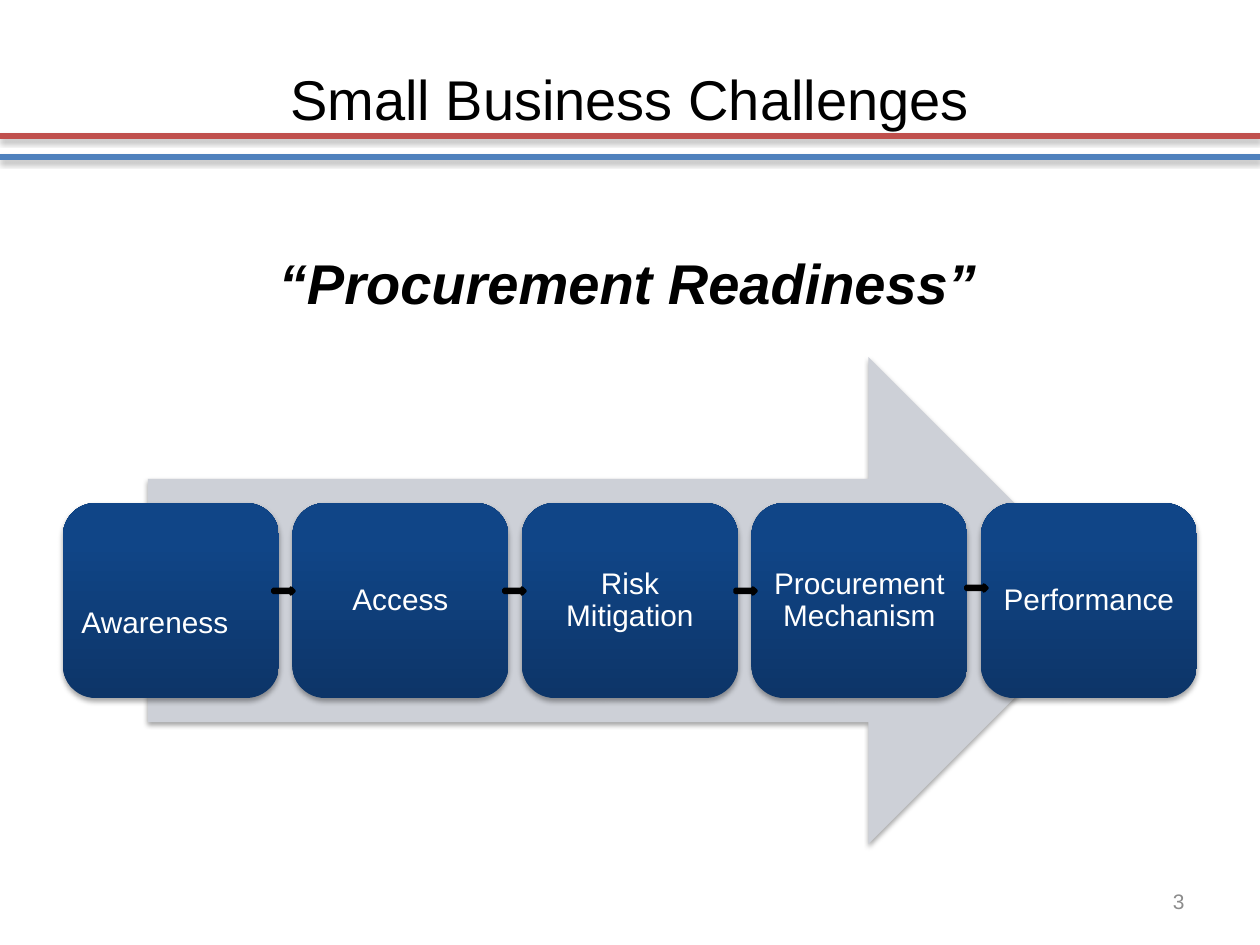
"""Build the Small Business Challenges slide with its five-step readiness arrow."""
from pptx import Presentation, util as u
from pptx.dml.color import RGBColor
from pptx.enum import shapes, text
from pptx.oxml import ns, parse_xml

PX = 914400 / 126


def px(*lengths):
    return [u.Emu(round(length * PX)) for length in lengths]


def colour(value):
    return RGBColor.from_string(value)


SHADOW = (
    f'<a:effectLst {ns.nsdecls("a")}><a:outerShdw blurRad="39370" dist="22860" '
    'dir="5400000" rotWithShape="0"><a:srgbClr val="000000">'
    '<a:alpha val="35000"/></a:srgbClr></a:outerShdw></a:effectLst>'
)

deck = Presentation()
deck.slide_width, deck.slide_height = px(1260, 945)
page = deck.slides.add_slide(deck.slide_layouts[5])

for top, shade in ((136, "C0504D"), (157, "4F81BD")):
    rule = page.shapes.add_connector(
        shapes.MSO_CONNECTOR.STRAIGHT, *px(0, top, 1260, top))
    rule.line.color.rgb = colour(shade)
    rule.line.width = u.Pt(3)
    rule.element.spPr.append(parse_xml(SHADOW))

title = page.shapes.title
title.left, title.top, title.width, title.height = px(63, 38, 1134, 120)
title.text_frame.text = "Small Business Challenges"
title.text_frame.vertical_anchor = text.MSO_ANCHOR.MIDDLE
para = title.text_frame.paragraphs[0]
para.alignment = text.PP_ALIGN.CENTER
span = para.runs[0]
span.font.name, span.font.size = "Arial", u.Pt(32)
span.font.color.rgb = colour("000000")

big_arrow = page.shapes.add_shape(
    shapes.MSO_SHAPE.RIGHT_ARROW, *px(148, 357, 964, 487))
big_arrow.fill.solid()
big_arrow.fill.fore_color.rgb = colour("CDD0D7")
big_arrow.line.fill.background()
big_arrow.element.spPr.append(parse_xml(SHADOW))

steps = ["Awareness", "Access", "Risk Mitigation", "Procurement Mechanism", "Performance"]
for index, step in enumerate(steps):
    card = page.shapes.add_shape(
        shapes.MSO_SHAPE.ROUNDED_RECTANGLE, *px(63 + index * 229.5, 503, 216, 195))
    card.fill.gradient()
    card.fill.gradient_angle = 90
    for stop, position, shade in zip(
            card.fill.gradient_stops, (0, 0.8), ("0D3568", "104587")):
        stop.position = position
        stop.color.rgb = colour(shade)
    card.line.fill.background()
    card.element.spPr.append(parse_xml(SHADOW))
    frame = card.text_frame
    frame.word_wrap = True
    frame.vertical_anchor = text.MSO_ANCHOR.MIDDLE
    frame.margin_left, frame.margin_right, frame.margin_top, frame.margin_bottom = px(
        9, 9, 9, 9)
    frame.text = step
    para = frame.paragraphs[0]
    para.alignment = text.PP_ALIGN.CENTER
    para.line_spacing = 0.9
    span = para.runs[0]
    span.font.name, span.font.size = "Arial", u.Pt(17)
    span.font.color.rgb = colour("FFFFFF")
    if step == "Awareness":
        para.alignment = text.PP_ALIGN.LEFT
        frame.margin_top, = px(55)

for index, top in enumerate((588, 588, 588, 585)):
    link = page.shapes.add_shape(
        shapes.MSO_SHAPE.RIGHT_ARROW, *px(273 + index * 231, top, 21, 6))
    link.shadow.inherit = False
    link.fill.solid()
    link.fill.fore_color.rgb = colour("4F81BD")
    link.line.color.rgb = colour("000000")
    link.line.width = u.Pt(2)

labels = [
    ("“Procurement Readiness”", (66, 242, 1124, 81), 32, "000000", True,
     text.PP_ALIGN.CENTER, text.MSO_ANCHOR.TOP),
    ("3", (903, 876, 294, 50), 12, "8C8C8C", False,
     text.PP_ALIGN.RIGHT, text.MSO_ANCHOR.MIDDLE),
]
for wording, place, size, shade, strong, alignment, anchor in labels:
    box = page.shapes.add_textbox(*px(*place))
    box.text_frame.word_wrap = True
    box.text_frame.vertical_anchor = anchor
    box.text_frame.text = wording
    para = box.text_frame.paragraphs[0]
    para.alignment = alignment
    span = para.runs[0]
    span.font.name, span.font.size = "Arial", u.Pt(size)
    span.font.bold = span.font.italic = strong
    span.font.color.rgb = colour(shade)

deck.save("out.pptx")
